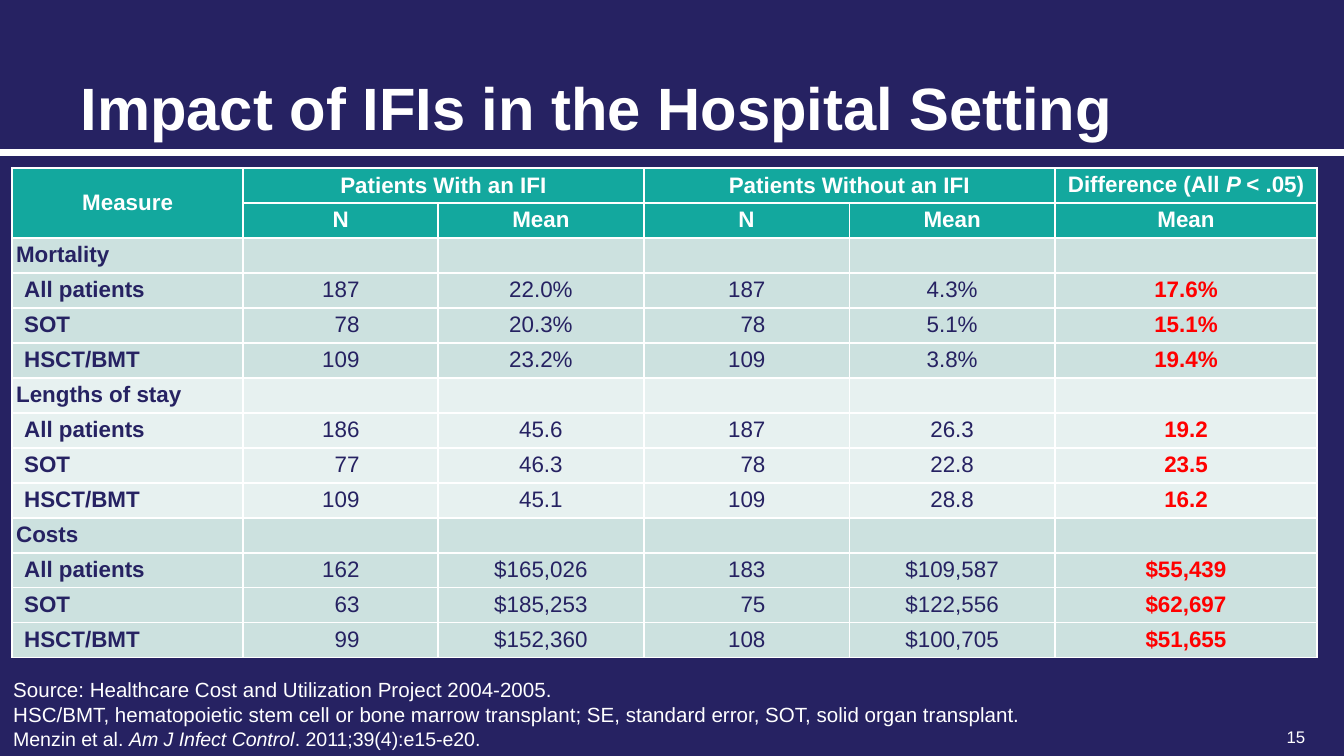
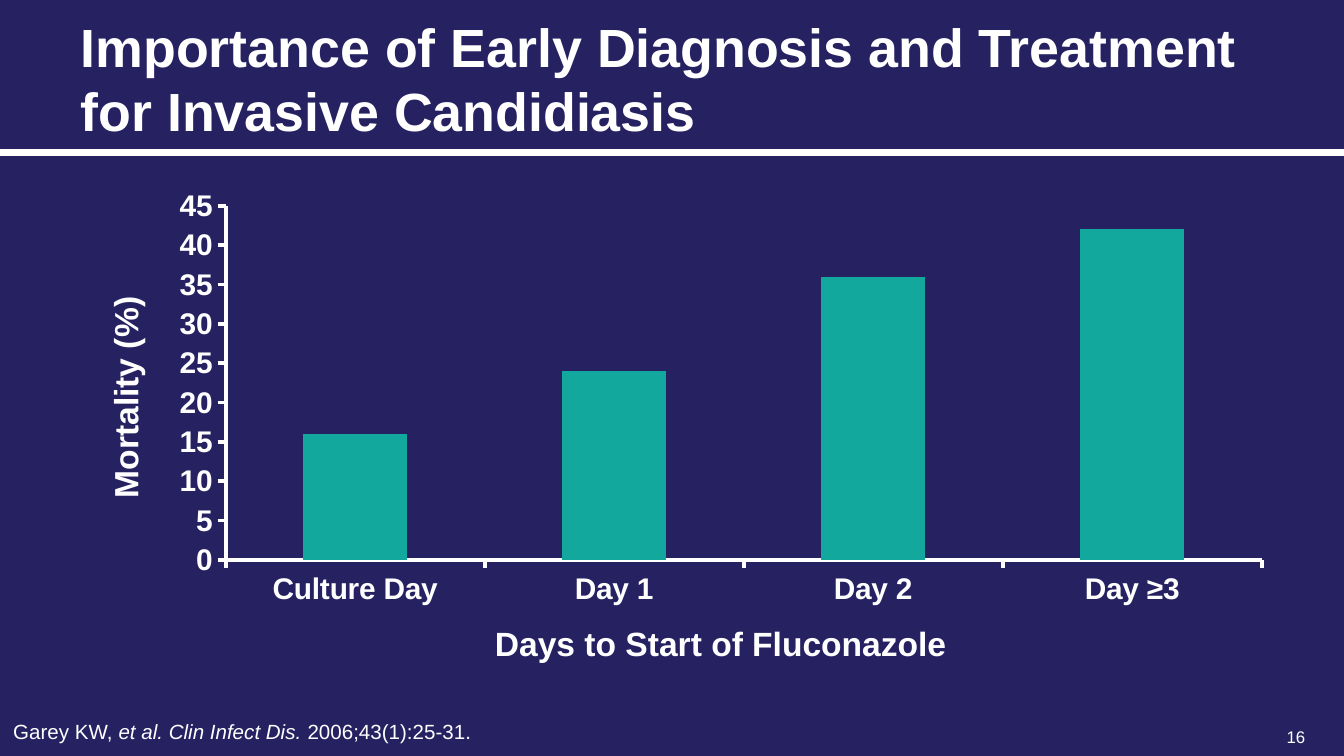
"""Build two slides on invasive fungal infections: a hospital impact table and a mortality chart."""
from lxml.etree import SubElement
from pptx import Presentation
from pptx.chart.data import CategoryChartData
from pptx.dml.color import RGBColor
from pptx.enum.chart import XL_CHART_TYPE as ChartType, XL_TICK_MARK as Tick
from pptx.enum.shapes import MSO_SHAPE as Shape
from pptx.enum.text import MSO_ANCHOR as Anchor, MSO_AUTO_SIZE as AutoSize, PP_ALIGN as Align
from pptx.oxml import parse_xml
from pptx.oxml.ns import nsdecls, qn
from pptx.util import Inches, Pt

NAVY = RGBColor(0x26, 0x22, 0x62)
WHITE = RGBColor(0xFF, 0xFF, 0xFF)
TEAL = RGBColor(0x13, 0xA8, 0x9E)
MIST = RGBColor(0xCC, 0xE1, 0xDF)
PALE = RGBColor(0xE7, 0xF1, 0xF0)
RED = RGBColor(0xFF, 0x00, 0x00)
FONT = "Arial"

deck = Presentation()
deck.slide_width, deck.slide_height = Inches(10), Inches(5.625)


def place(left, top, width, height):
    """Turn percentages of the slide's size into lengths."""
    across, down = deck.slide_width / 100, deck.slide_height / 100
    return int(left * across), int(top * down), int(width * across), int(height * down)


def write(para, text, size, color=WHITE, bold=False, align=Align.LEFT):
    """Fill a paragraph, with the parts between asterisks in italics."""
    para.alignment = align
    for index, part in enumerate(text.split("*")):
        if part:
            span = para.add_run()
            span.text = part
            span.font.name, span.font.size = FONT, Pt(size)
            span.font.color.rgb, span.font.bold = color, bold
            if index % 2:
                span.font.italic = True


slides = [
    ("Impact of IFIs in the Hospital Setting", 32, "15", (0, 88.53, 98.1, 11.56), Anchor.BOTTOM, [
        ("Source: Healthcare Cost and Utilization Project 2004-2005.", 11),
        ("HSC/BMT, hematopoietic stem cell or bone marrow transplant; "
         "SE, standard error, SOT, solid organ transplant.", 11),
        ("Menzin et al. *Am J Infect Control*. 2011;39(4):e15-e20.", 10.5)]),
    ("Importance of Early Diagnosis and Treatment for Invasive Candidiasis", 28.8, "16",
     (0, 94.22, 85.1, 5.16), Anchor.TOP, [
        ("Garey KW, *et al. Clin Infect Dis. *2006;43(1):25-31.", 11)]),
]

master = deck.slide_master
master.background.fill.solid()
master.background.fill.fore_color.rgb = NAVY

pages = []
for heading, heading_size, number, source_area, source_anchor, sources in slides:
    page = deck.slides.add_slide(deck.slide_layouts[5])
    pages.append(page)
    title = page.shapes.title
    title.left, title.top, title.width, title.height = place(5, 5.69, 90, 14.04)
    title.text_frame.auto_size = AutoSize.NONE
    title.text_frame.vertical_anchor = Anchor.BOTTOM
    write(title.text_frame.paragraphs[0], heading, heading_size, bold=True)

    number_box = page.shapes.add_textbox(*place(91.2, 94.76, 6.9, 5.33))
    number_box.text_frame.word_wrap = True
    number_box.text_frame.vertical_anchor = Anchor.MIDDLE
    write(number_box.text_frame.paragraphs[0], number, 9, align=Align.RIGHT)

    source_box = page.shapes.add_textbox(*place(*source_area))
    frame = source_box.text_frame
    frame.word_wrap = True
    frame.vertical_anchor = source_anchor
    for index, (line, size) in enumerate(sources):
        write(frame.add_paragraph() if index else frame.paragraphs[0], line, size)

impact_page, timing_page = pages

band = impact_page.shapes.add_shape(Shape.RECTANGLE, *place(0, 19.73, 100, 0.89))
band.shadow.inherit = False
band.fill.solid()
band.fill.fore_color.rgb = WHITE
band.line.fill.background()
master.shapes._spTree.append(band._element)

rows = [
    ("Measure", "Patients With an IFI", "", "Patients Without an IFI", "", "Difference (All *P *< .05)"),
    ("", "N", "Mean", "N", "Mean", "Mean"),
    ("Mortality", "", "", "", "", ""),
    ("All patients", "187", "22.0%", "187", "4.3%", "17.6%"),
    ("SOT", "78", "20.3%", "78", "5.1%", "15.1%"),
    ("HSCT/BMT", "109", "23.2%", "109", "3.8%", "19.4%"),
    ("Lengths of stay", "", "", "", "", ""),
    ("All patients", "186", "45.6", "187", "26.3", "19.2"),
    ("SOT", "77", "46.3", "78", "22.8", "23.5"),
    ("HSCT/BMT", "109", "45.1", "109", "28.8", "16.2"),
    ("Costs", "", "", "", "", ""),
    ("All patients", "162", "$165,026", "183", "$109,587", "$55,439"),
    ("SOT", "63", "$185,253", "75", "$122,556", "$62,697"),
    ("HSCT/BMT", "99", "$152,360", "108", "$100,705", "$51,655"),
]
HEADER_ROWS, GROUP_ROWS = 2, 4
column_shares = [17.2, 14.5, 15.3, 15.3, 15.3, 19.5]
table_area = place(0.9, 22.22, 97.2, 64.71)
table_frame = impact_page.shapes.add_table(len(rows), len(column_shares), *table_area)
table = table_frame.table
for column, share in zip(table.columns, column_shares):
    column.width = int(deck.slide_width * share / 100)
for row in table.rows:
    row.height = table_area[3] // len(rows)

for row_index, values in enumerate(rows):
    header = row_index < HEADER_ROWS
    group, member = divmod(row_index - HEADER_ROWS, GROUP_ROWS)
    for column_index, value in enumerate(values):
        cell = table.cell(row_index, column_index)
        cell.margin_left = cell.margin_right = Inches(0.03)
        cell.margin_top = cell.margin_bottom = Inches(0.03)
        cell.fill.solid()
        cell.fill.fore_color.rgb = TEAL if header else (MIST, PALE)[group % 2]
        para = cell.text_frame.paragraphs[0]
        if header:
            write(para, value, 12, WHITE, True, Align.CENTER)
            if row_index == 0 and column_index < 5:
                cell.vertical_anchor = Anchor.MIDDLE
        elif column_index == 0:
            write(para, value, 12, NAVY, True)
            if member:
                cell.margin_left = Inches(0.09)
        elif column_index == 5:
            write(para, value, 12, RED, True, Align.CENTER)
        elif column_index in (1, 3):
            write(para, value, 12, NAVY, align=Align.RIGHT)
            cell.margin_right = (table.columns[column_index].width - Inches(0.28)) // 2
        else:
            write(para, value, 12, NAVY, align=Align.CENTER)
        if not value:
            SubElement(para._p, qn("a:endParaRPr")).set("sz", "1200")

        sides = ["L", "R"]
        if row_index <= HEADER_ROWS:
            sides.append("T")
        if header or row_index == len(rows) - 1:
            sides.append("B")
        properties = cell._tc.get_or_add_tcPr()
        for position, side in enumerate(sides):
            properties.insert(position, parse_xml(
                f'<a:ln{side} {nsdecls("a")} w="12700"><a:solidFill>'
                f'<a:srgbClr val="{WHITE}"/></a:solidFill></a:ln{side}>'))

table.cell(0, 0).merge(table.cell(1, 0))
for first in (1, 3):
    table.cell(0, first).merge(table.cell(0, first + 1))

data = CategoryChartData()
data.categories = ["Culture Day", "Day 1", "Day 2", "Day ≥3"]
data.add_series("Series 1", [16, 24, 36, 42])
chart = timing_page.shapes.add_chart(
    ChartType.COLUMN_CLUSTERED, *place(5, 23.29, 90.7, 65.96), data).chart
chart.has_legend = chart.has_title = False
chart.font.name, chart.font.size = FONT, Pt(18)
chart.font.color.rgb = WHITE
plot = chart.plots[0]
plot.gap_width = 150
plot.vary_by_categories = False
columns = plot.series[0].format.fill
columns.solid()
columns.fore_color.rgb = TEAL

for axis, caption in ((chart.category_axis, "Days to Start of Fluconazole"),
                      (chart.value_axis, "Mortality (%)")):
    axis.has_major_gridlines = False
    axis.major_tick_mark, axis.minor_tick_mark = Tick.OUTSIDE, Tick.NONE
    axis.format.line.color.rgb = WHITE
    axis.format.line.width = Pt(2)
    labels = axis.tick_labels.font
    labels.name, labels.size, labels.bold = FONT, Pt(16), True
    labels.color.rgb = WHITE
    write(axis.axis_title.text_frame.paragraphs[0], caption, 18, bold=True, align=Align.CENTER)
chart.value_axis.minimum_scale, chart.value_axis.maximum_scale = 0, 45
chart.value_axis.major_unit = 5

plot_area = chart._chartSpace.chart.plotArea
layout = parse_xml(f'<c:layout {nsdecls("c")}><c:manualLayout/></c:layout>')
for name, setting in (("layoutTarget", "inner"), ("xMode", "edge"), ("yMode", "edge"),
                      ("x", "0.13"), ("y", "0.06"), ("w", "0.85"), ("h", "0.71")):
    SubElement(layout[0], qn(f"c:{name}")).set("val", setting)
plot_area.insert(0, layout)

deck.save("out.pptx")
